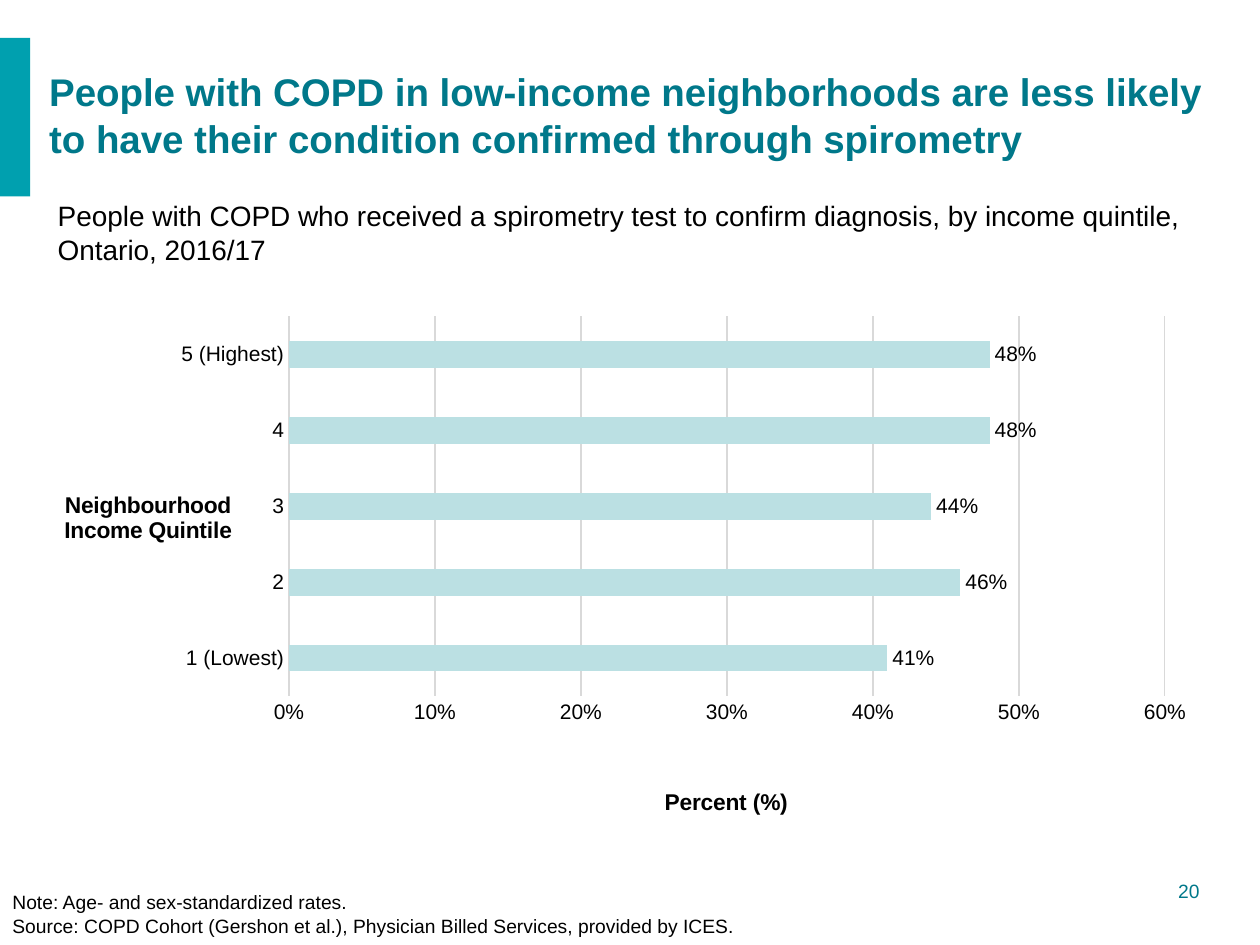
from pptx import Presentation
from pptx.chart.data import CategoryChartData
from pptx.dml.color import RGBColor
from pptx.enum.chart import XL_CHART_TYPE as ChartType, XL_LABEL_POSITION as LabelPosition
from pptx.enum.chart import XL_TICK_MARK as TickMark
from pptx.enum.shapes import MSO_SHAPE as ShapeKind
from pptx.enum.text import MSO_ANCHOR as Anchor, MSO_AUTO_SIZE as AutoSize, PP_ALIGN as Align
from pptx.oxml import parse_xml
from pptx.oxml.ns import nsdecls, qn
from pptx.util import Inches, Pt

COLORS = {
    "accent": "00A0AF",
    "heading": "00788A",
    "text": "000000",
    "bar": "BBE0E3",
    "grid": "D9D9D9",
}
RATES = {"1 (Lowest)": 0.41, "2": 0.46, "3": 0.44, "4": 0.48, "5 (Highest)": 0.48}


def color(name):
    return RGBColor.from_string(COLORS[name])


def box(*lengths):
    return [Inches(length) for length in lengths]


def format_font(font, size, color_name="text", bold=False):
    values = {"name": "Arial", "size": Pt(size), "bold": bold}
    for attribute, value in values.items():
        setattr(font, attribute, value)
    font.color.rgb = color(color_name)


def write_lines(frame, lines, size, color_name="text", bold=False, align=Align.LEFT):
    for index, line in enumerate(lines):
        paragraph = frame.paragraphs[0] if index == 0 else frame.add_paragraph()
        paragraph.alignment = align
        run = paragraph.add_run()
        run.text = line
        format_font(run.font, size, color_name, bold)


def add_text(slide, position, lines, size, **style):
    frame = slide.shapes.add_textbox(*box(*position)).text_frame
    frame.word_wrap = True
    write_lines(frame, lines, size, **style)


def add_accent(slide):
    shape = slide.shapes.add_shape(ShapeKind.RECTANGLE, *box(0, 0.3, 0.24, 1.26))
    shape.shadow.inherit = False
    shape.fill.solid()
    shape.fill.fore_color.rgb = color("accent")
    shape.line.fill.background()


def set_title(slide, text):
    title = slide.shapes.title
    position = box(0.29, 0.43, 9.36, 0.96)
    for attribute, value in zip(("left", "top", "width", "height"), position):
        setattr(title, attribute, value)
    frame = title.text_frame
    values = {"word_wrap": True, "auto_size": AutoSize.NONE, "vertical_anchor": Anchor.MIDDLE}
    for attribute, value in values.items():
        setattr(frame, attribute, value)
    write_lines(frame, [text], 22, "heading", True)


def place(element, index, modes, **fractions):
    for layout in element.findall(qn("c:layout")):
        element.remove(layout)
    settings = {**modes, **fractions}
    children = "".join(f'<c:{tag} val="{value}"/>' for tag, value in settings.items())
    element.insert(index, parse_xml(
        f'<c:layout {nsdecls("c")}><c:manualLayout>{children}</c:manualLayout></c:layout>'))


def title_axis(axis, lines, x, y):
    frame = axis.axis_title.text_frame
    write_lines(frame, lines, 13, bold=True, align=Align.CENTER)
    body = frame._txBody.find(qn("a:bodyPr"))
    for attribute, value in {"rot": "0", "vert": "horz"}.items():
        body.set(attribute, value)
    place(axis.axis_title._element, 1, {"xMode": "edge", "yMode": "edge"}, x=x, y=y)


def format_axis(axis):
    axis.major_tick_mark = axis.minor_tick_mark = TickMark.NONE
    format_font(axis.tick_labels.font, 12)


def format_line(line):
    line.color.rgb = color("grid")
    line.width = Pt(0.75)


def add_rate_chart(slide):
    data = CategoryChartData(number_format="0%")
    data.categories = list(RATES)
    data.add_series("Series 1", list(RATES.values()))
    chart = slide.shapes.add_chart(
        ChartType.BAR_CLUSTERED, *box(0.48, 2.31, 9.16, 4.22), data).chart
    chart.has_legend = chart.has_title = False
    format_font(chart.font, 10)
    place(chart._chartSpace.chart.plotArea, 0,
          {"layoutTarget": "inner", "xMode": "edge", "yMode": "edge"},
          x=0.198, y=0.048, w=0.759, h=0.716)

    plot = chart.plots[0]
    plot.gap_width = 182
    plot.vary_by_categories = False
    fill = plot.series[0].format.fill
    fill.solid()
    fill.fore_color.rgb = color("bar")
    plot.has_data_labels = True
    labels = plot.data_labels
    label_values = {
        "show_value": True,
        "position": LabelPosition.OUTSIDE_END,
        "number_format": "0%",
        "number_format_is_linked": False,
    }
    for attribute, value in label_values.items():
        setattr(labels, attribute, value)
    format_font(labels.font, 12)

    category_axis, value_axis = chart.category_axis, chart.value_axis
    for axis in (category_axis, value_axis):
        format_axis(axis)
    scale = {"minimum_scale": 0, "maximum_scale": 0.6, "major_unit": 0.1,
             "has_major_gridlines": True}
    for attribute, value in scale.items():
        setattr(value_axis, attribute, value)
    value_axis.tick_labels.number_format = "0%"
    value_axis.tick_labels.number_format_is_linked = False
    value_axis.format.line.fill.background()
    format_line(value_axis.major_gridlines.format.line)
    format_line(category_axis.format.line)
    title_axis(category_axis, ["Neighbourhood", "Income Quintile"], 0.0, 0.37)
    title_axis(value_axis, ["Percent (%)"], 0.52, 0.93)


def main():
    presentation = Presentation()
    presentation.slide_width, presentation.slide_height = box(10, 7.5)
    slide = presentation.slides.add_slide(presentation.slide_layouts.get_by_name("Title Only"))
    add_text(slide, (8.45, 6.93, 1.17, 0.29), ["20"], 11, color_name="heading", align=Align.RIGHT)
    add_accent(slide)
    set_title(slide, "People with COPD in low-income neighborhoods are less likely "
                     "to have their condition confirmed through spirometry")
    add_text(slide, (0.36, 1.53, 9.29, 0.64),
             ["People with COPD who received a spirometry test to confirm diagnosis, "
              "by income quintile, Ontario, 2016/17"], 16)
    add_text(slide, (0, 7.02, 6.6, 0.47),
             ["Note: Age- and sex-standardized rates.",
              "Source: COPD Cohort (Gershon et al.), Physician Billed Services, provided by ICES."], 11)
    add_rate_chart(slide)
    presentation.save("out.pptx")


if __name__ == "__main__":
    main()
